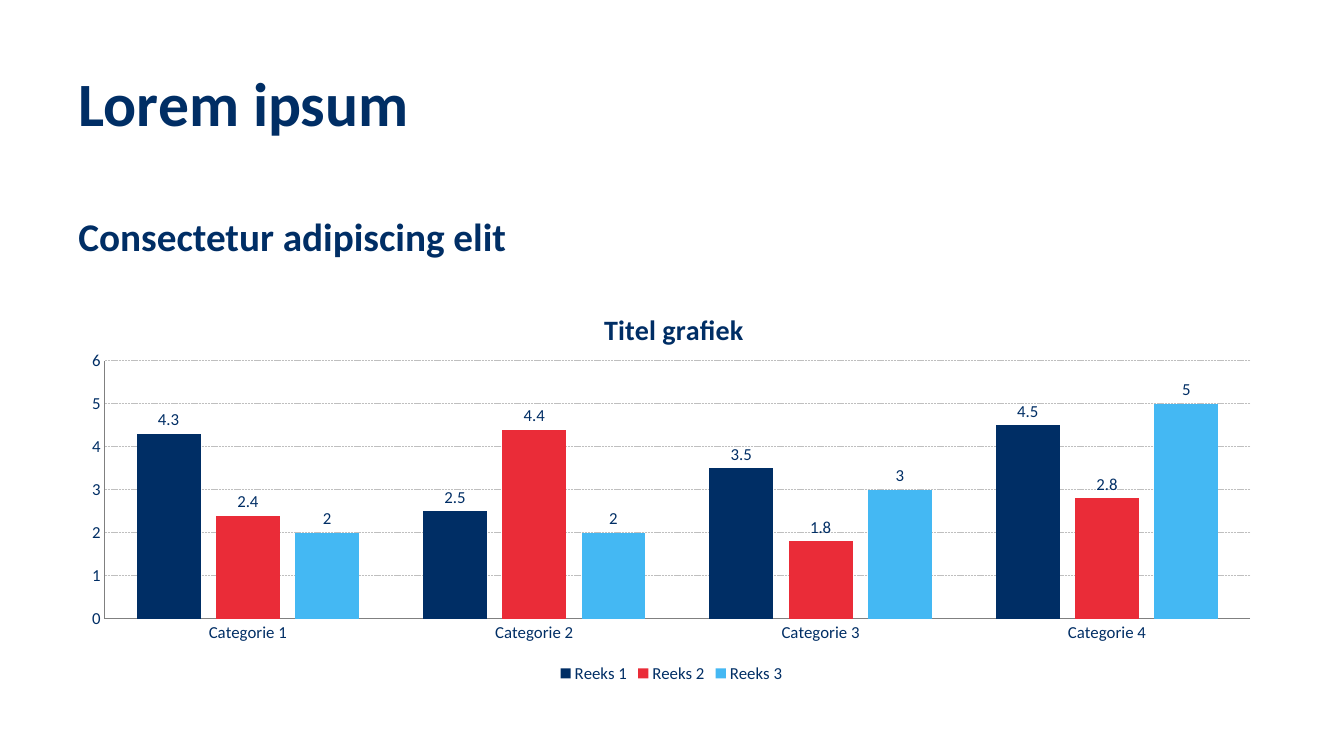
from dataclasses import dataclass
from typing import Any

from lxml.etree import SubElement as add_sub
from pptx import Presentation as Deck
from pptx.chart.data import CategoryChartData as Data
from pptx.dml.color import RGBColor as Rgb
from pptx.enum.chart import XL_CHART_TYPE as Kind
from pptx.enum.chart import XL_LABEL_POSITION as Spot
from pptx.enum.chart import XL_LEGEND_POSITION as Side
from pptx.enum.chart import XL_TICK_MARK as Tick
from pptx.enum.dml import MSO_LINE as Dash
from pptx.enum.text import MSO_ANCHOR as Anchor
from pptx.enum.text import MSO_AUTO_SIZE as Fit
from pptx.enum.text import PP_ALIGN as Align
from pptx.oxml.ns import qn
from pptx.util import Inches, Pt


@dataclass(frozen=True)
class Theme:
    font: str = "Calibri"
    navy: str = "002E65"
    red: str = "EA2C38"
    sky: str = "44B8F3"
    axis: str = "808080"
    grid: str = "BFBFBF"
    title: int = 44
    head: int = 28
    chart: int = 20
    label: int = 12
    line: float = 0.5


@dataclass(frozen=True)
class Box:
    left: float
    top: float
    width: float
    height: float

    def inches(self) -> tuple[int, int, int, int]:
        return (Inches(self.left), Inches(self.top),
                Inches(self.width), Inches(self.height))


@dataclass(frozen=True)
class Series:
    name: str
    values: tuple[float, ...]
    color: str


THEME = Theme()
LEFT, WIDTH = 0.68, 11.96
GROUPS = [f"Categorie {n}" for n in range(1, 5)]
SERIES = [
    Series("Reeks 1", (4.3, 2.5, 3.5, 4.5), THEME.navy),
    Series("Reeks 2", (2.4, 4.4, 1.8, 2.8), THEME.red),
    Series("Reeks 3", (2, 2, 3, 5), THEME.sky),
]


def style(font: Any, size: int, bold: bool = False) -> None:
    font.name = THEME.font
    font.size = Pt(size)
    font.bold = bold
    font.color.rgb = Rgb.from_string(THEME.navy)


def write(frame: Any, text: str, size: int) -> None:
    part = frame.paragraphs[0]
    run = part.add_run()
    run.text = text
    style(run.font, size, bold=True)


def place(shape: Any, box: Box, text: str, size: int) -> None:
    shape.left, shape.top, shape.width, shape.height = box.inches()
    frame = shape.text_frame
    frame.word_wrap = True
    frame.auto_size = Fit.NONE
    frame.vertical_anchor = Anchor.TOP
    write(frame, text, size)
    part = frame.paragraphs[0]
    part.alignment = Align.LEFT
    part.line_spacing = 0.9


def set_layout(node: Any, index: int, **parts: float | str) -> None:
    for old in node.findall(qn("c:layout")):
        node.remove(old)
    layout = add_sub(node, qn("c:layout"))
    node.insert(index, layout)
    manual = add_sub(layout, qn("c:manualLayout"))
    for name, value in parts.items():
        add_sub(manual, qn(f"c:{name}")).set("val", str(value))


def set_line(line: Any, color: str) -> None:
    line.color.rgb = Rgb.from_string(color)
    line.width = Pt(THEME.line)


def set_axis(axis: Any) -> None:
    axis.major_tick_mark = axis.minor_tick_mark = Tick.NONE
    style(axis.tick_labels.font, THEME.label)
    set_line(axis.format.line, THEME.axis)


def add_chart(slide: Any, box: Box) -> None:
    data = Data()
    data.categories = GROUPS
    for item in SERIES:
        data.add_series(item.name, item.values)
    chart = slide.shapes.add_chart(
        Kind.COLUMN_CLUSTERED, *box.inches(), data).chart
    style(chart.font, THEME.label)

    chart.has_title = True
    title = chart.chart_title
    write(title.text_frame, "Titel grafiek", THEME.chart)
    title.include_in_layout = False
    set_layout(title.element, 1, xMode="edge", yMode="edge", x=0.44, y=0.05)

    chart.has_legend = True
    chart.legend.position = Side.BOTTOM
    chart.legend.include_in_layout = False
    style(chart.legend.font, THEME.label)

    set_axis(chart.category_axis)
    scale = chart.value_axis
    set_axis(scale)
    scale.minimum_scale, scale.maximum_scale, scale.major_unit = 0, 6, 1
    scale.has_major_gridlines = True
    grid = scale.major_gridlines.format.line
    set_line(grid, THEME.grid)
    grid.dash_style = Dash.SQUARE_DOT

    plot = chart.plots[0]
    plot.gap_width, plot.overlap = 100, -24
    plot.vary_by_categories = False
    for item, bars in zip(SERIES, plot.series):
        bars.format.fill.solid()
        bars.format.fill.fore_color.rgb = Rgb.from_string(item.color)
        labels = bars.data_labels
        labels.show_value = True
        labels.position = Spot.OUTSIDE_END
        style(labels.font, THEME.label)
    area = chart.element.find(".//" + qn("c:plotArea"))
    set_layout(area, 0, layoutTarget="inner", xMode="edge", yMode="edge",
               x=0.03, y=0.19, w=0.95, h=0.64)


def main() -> None:
    deck = Deck()
    deck.slide_width, deck.slide_height = Inches(13.33), Inches(7.5)
    slide = deck.slides.add_slide(deck.slide_layouts[5])
    place(slide.shapes.title, Box(LEFT, 0.68, WIDTH, 1.17),
          "Lorem ipsum", THEME.title)
    head = Box(LEFT, 2.11, WIDTH, 0.71)
    place(slide.shapes.add_textbox(*head.inches()), head,
          "Consectetur adipiscing elit", THEME.head)
    add_chart(slide, Box(LEFT, 2.82, WIDTH, 4))
    deck.save("out.pptx")


if __name__ == "__main__":
    main()
